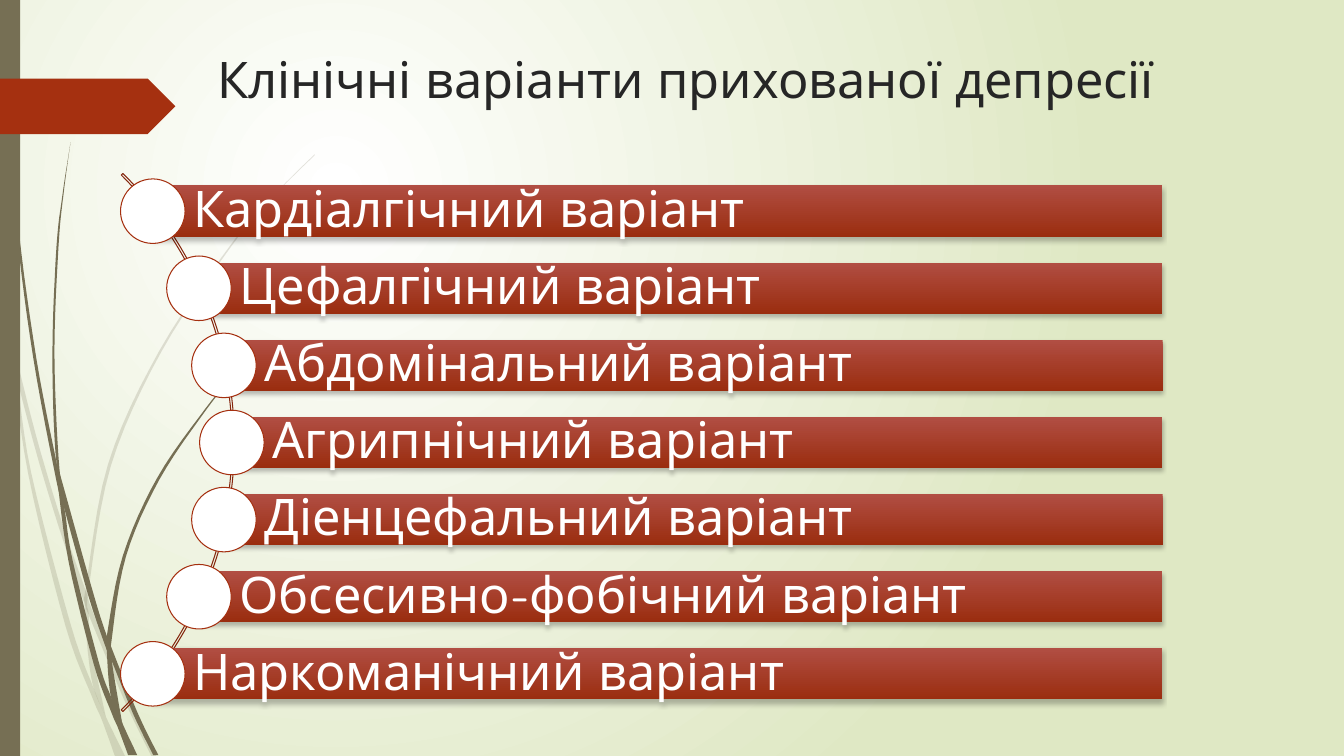
from math import sqrt

from lxml import etree
from pptx import Presentation
from pptx.dml.color import RGBColor
from pptx.enum.shapes import MSO_SHAPE
from pptx.enum.text import MSO_ANCHOR, MSO_AUTO_SIZE, PP_ALIGN
from pptx.oxml.ns import qn
from pptx.util import Inches, Pt

RECTANGLE, OVAL = MSO_SHAPE.RECTANGLE, MSO_SHAPE.OVAL
PENTAGON, BLOCK_ARC = MSO_SHAPE.PENTAGON, MSO_SHAPE.BLOCK_ARC
LEFT, TOP, MIDDLE = PP_ALIGN.LEFT, MSO_ANCHOR.TOP, MSO_ANCHOR.MIDDLE
NO_AUTOFIT = MSO_AUTO_SIZE.NONE

# The slide is a grid of one-inch cells; all places are in columns and rows.
CELL = Inches(1)
COLUMNS, ROWS = 13.33, 7.5
FONT, TEXT_SIZE = "Quicksand", 36
OLIVE, RUST, DARK_RUST, WHITE = "766F54", "A53010", "84260D", "FFFFFF"

VARIANTS = [
    "Кардіалгічний варіант",
    "Цефалгічний варіант",
    "Абдомінальний варіант",
    "Агрипнічний варіант",
    "Діенцефальний варіант",
    "Обсесивно-фобічний варіант",
    "Наркоманічний варіант",
]
ARC_X, ARC_Y, ARC_RADIUS = -1.45, 4.39, 3.75
ARC_SIZE = 7.55
ROW_STEP, BAR_HEIGHT, BAR_RIGHT, DOT_SIZE = 0.765, 0.51, 11.53, 0.64

# Each blade of grass is a left and a right edge, both from tip to root.
FAINT_BLADES = [
    ([(0, 2.99), (0.1, 3.44), (0.17, 3.76), (0.36, 4.49), (0.58, 5.22),
      (0.84, 5.99), (0.88, 6.1), (1.23, 6.94), (1.5, 7.5)],
     [(0, 2.82), (0.09, 3.22), (0.14, 3.45), (0.36, 4.33), (0.62, 5.2),
      (0.85, 5.86), (0.92, 6.07), (1.27, 6.92), (1.55, 7.5)]),
    ([(0.11, 3.5), (0.28, 4.7), (0.65, 6.21), (0.92, 6.93), (1.01, 7.14), (1.14, 7.5)],
     [(0.11, 3.5), (0.17, 3.76), (0.31, 4.69), (0.7, 6.19), (0.93, 6.83),
      (1.05, 7.11), (1.24, 7.5)]),
    ([(3.12, 1.53), (2.68, 1.97), (2.28, 2.44), (1.58, 3.48), (1.07, 4.61),
      (0.85, 5.84), (0.84, 5.99), (0.87, 6.46), (0.93, 6.83), (1.05, 7.11)],
     [(3.12, 1.54), (2.68, 1.98), (2.29, 2.45), (1.6, 3.49), (1.1, 4.62),
      (0.88, 5.84), (0.88, 6.1), (0.91, 6.46), (1.05, 7.11)]),
]
DARK_BLADES = [
    ([(0.03, 0), (0.04, 0.48), (0.07, 1.1), (0.17, 2.33), (0.33, 3.55), (0.56, 4.77),
      (0.64, 5.05), (0.88, 5.92), (1.06, 6.45), (1.11, 6.56), (1.32, 7.08), (1.52, 7.49)],
     [(0.04, 0), (0.05, 0.48), (0.08, 1.09), (0.19, 2.32), (0.36, 3.55), (0.55, 4.53),
      (0.6, 4.72), (0.93, 5.9), (1.06, 6.31), (1.1, 6.41), (1.36, 7.06), (1.57, 7.49)]),
    ([(0.57, 4.77), (0.68, 5.57), (0.93, 6.59), (1.11, 7.08), (1.17, 7.22), (1.27, 7.49)],
     [(0.57, 4.77), (0.64, 5.05), (0.72, 5.56), (0.98, 6.57), (1.1, 6.91),
      (1.22, 7.19), (1.36, 7.49)]),
    ([(0.7, 1.41), (0.62, 1.93), (0.56, 2.45), (0.52, 3.49), (0.55, 4.49), (0.64, 5.05)],
     [(0.7, 1.41), (0.63, 1.93), (0.58, 2.45), (0.54, 3.49), (0.58, 4.53), (0.64, 5.05)]),
    ([(2.6, 3.44), (2.45, 3.58), (2.31, 3.73), (2.04, 4.05), (1.56, 4.74), (1.22, 5.51),
      (1.06, 6.31), (1.06, 6.45), (1.1, 6.91), (1.22, 7.19)],
     [(2.61, 3.44), (2.45, 3.59), (2.31, 3.74), (2.05, 4.06), (1.58, 4.76), (1.25, 5.52),
      (1.11, 6.33), (1.11, 6.56), (1.21, 7.16)]),
]


def color(hex_string):
    return RGBColor.from_string(hex_string)


def cells(*lengths):
    return [round(length * CELL) for length in lengths]


def add_element(parent, tag, **attributes):
    values = {name: str(value) for name, value in attributes.items()}
    return etree.SubElement(parent, qn(tag), values)


def set_gradient(fill, start, end):
    fill.gradient()
    for stop, position, hex_string in zip(fill.gradient_stops, (0, 1), (start, end)):
        stop.position = position
        stop.color.rgb = color(hex_string)


def set_background(page):
    """Fill the page with a glow centred a quarter of the way in and down."""
    set_gradient(page.background.fill, WHITE, "DFE8C4")
    gradient = next(page.element.iter(qn("a:gradFill")))
    gradient.remove(gradient.find(qn("a:lin")))
    glow = add_element(gradient, "a:path", path="circle")
    add_element(glow, "a:fillToRect", l=50000, t=50000, r=100000, b=100000)


def style(shape, fill=None, line=None):
    shape.shadow.inherit = False
    if fill:
        shape.fill.solid()
        shape.fill.fore_color.rgb = color(fill)
    else:
        shape.fill.background()
    if line:
        shape.line.color.rgb = color(line)
        shape.line.width = Pt(0.75)
    else:
        shape.line.fill.background()


def add_preset(page, kind, place, fill=None, line=None):
    shape = page.shapes.add_shape(kind, *cells(*place))
    style(shape, fill, line)
    return shape


def smooth(knots, steps=6):
    """Return points along a Catmull-Rom curve through the knots."""
    padded = [knots[0], *knots, knots[-1]]
    points = [knots[0]]
    for a, b, c, d in zip(padded, padded[1:], padded[2:], padded[3:]):
        for step in range(1, steps + 1):
            t = step / steps
            points.append(tuple(
                q + t * (r - p) / 2
                + t**2 * (2 * p - 5 * q + 4 * r - s) / 2
                + t**3 * (3 * q - p - 3 * r + s) / 2
                for p, q, r, s in zip(a, b, c, d)))
    return points


def add_blade(page, left_edge, right_edge, alpha=None):
    outline = smooth(left_edge) + smooth(right_edge)[::-1]
    start, *rest = [(x * 1000, y * 1000) for x, y in outline]
    builder = page.shapes.build_freeform(*start, scale=CELL / 1000)
    builder.add_line_segments(rest, close=True)
    blade = builder.convert_to_shape()
    style(blade, OLIVE)
    if alpha:
        tint = next(blade.element.spPr.iter(qn("a:srgbClr")))
        add_element(tint, "a:alpha", val=alpha * 1000)


def write(frame, text, hex_string, anchor):
    frame.word_wrap = True
    frame.auto_size = NO_AUTOFIT
    frame.vertical_anchor = anchor
    para = frame.paragraphs[0]
    para.alignment = LEFT
    span = para.add_run()
    span.text = text
    span.font.name, span.font.size = FONT, Pt(TEXT_SIZE)
    span.font.color.rgb = color(hex_string)
    return para


def add_title(page, text):
    title = page.shapes.title
    title.left, title.top, title.width, title.height = cells(2.06, 0.43, 10.52, 1.16)
    write(title.text_frame, text, "262626", TOP)


def add_bar(page, text, x, y):
    """Add a bar whose left edge has its middle at x, y."""
    bar = add_preset(page, RECTANGLE, (x, y - BAR_HEIGHT / 2, BAR_RIGHT - x, BAR_HEIGHT))
    set_gradient(bar.fill, "B14E43", "9A2D0F")
    bar.fill.gradient_angle = 270
    effects = bar.element.spPr.find(qn("a:effectLst"))
    shadow = add_element(effects, "a:outerShdw", blurRad=Pt(3), dist=Pt(2),
                         dir=5400000, rotWithShape=0)
    tint = add_element(shadow, "a:srgbClr", val="000000")
    add_element(tint, "a:alpha", val=25000)
    frame = bar.text_frame
    frame.margin_left, frame.margin_right = cells(0.4, 0.1)
    frame.margin_top, frame.margin_bottom = cells(0.1, 0.1)
    write(frame, text, WHITE, MIDDLE).line_spacing = 0.9


def add_variant_list(page):
    corner = (ARC_X - ARC_SIZE / 2, ARC_Y - ARC_SIZE / 2)
    arc = add_preset(page, BLOCK_ARC, (*corner, ARC_SIZE, ARC_SIZE), line=DARK_RUST)
    for index, value in enumerate((189, 27, 0.003)):
        arc.adjustments[index] = value
    for index, variant in enumerate(VARIANTS):
        rise = (index - (len(VARIANTS) - 1) / 2) * ROW_STEP
        x, y = ARC_X + sqrt(ARC_RADIUS**2 - rise**2), ARC_Y + rise
        add_bar(page, variant, x, y)
        dot = (x - DOT_SIZE / 2, y - DOT_SIZE / 2, DOT_SIZE, DOT_SIZE)
        add_preset(page, OVAL, dot, WHITE, RUST)


def main():
    deck = Presentation()
    deck.slide_width, deck.slide_height = cells(COLUMNS, ROWS)
    page = deck.slides.add_slide(deck.slide_layouts[5])
    set_background(page)
    for edges in FAINT_BLADES:
        add_blade(page, *edges, alpha=20)
    for edges in DARK_BLADES:
        add_blade(page, *edges)
    add_preset(page, RECTANGLE, (0, 0, 0.2, ROWS), OLIVE)
    add_preset(page, PENTAGON, (0, 0.78, 1.74, 0.55), RUST)
    add_title(page, "Клінічні варіанти прихованої депресії")
    add_variant_list(page)
    deck.save("out.pptx")


if __name__ == "__main__":
    main()
